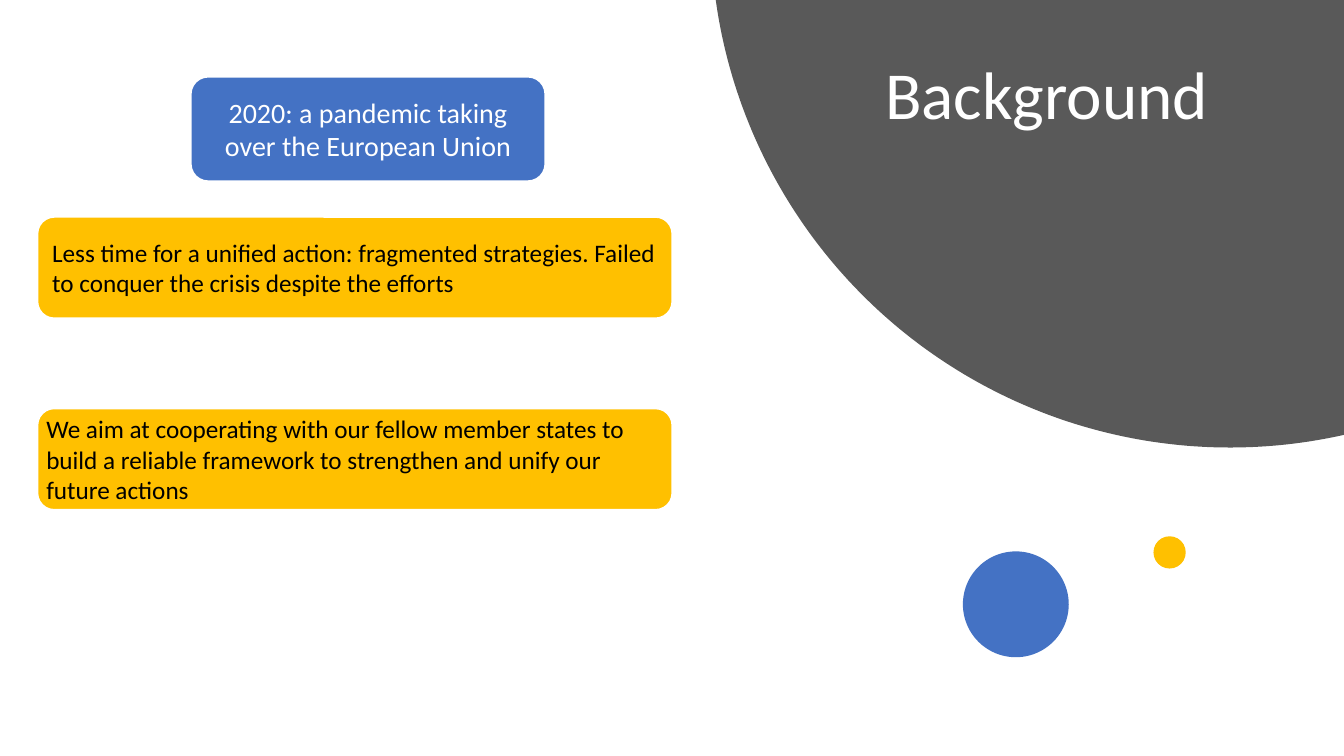
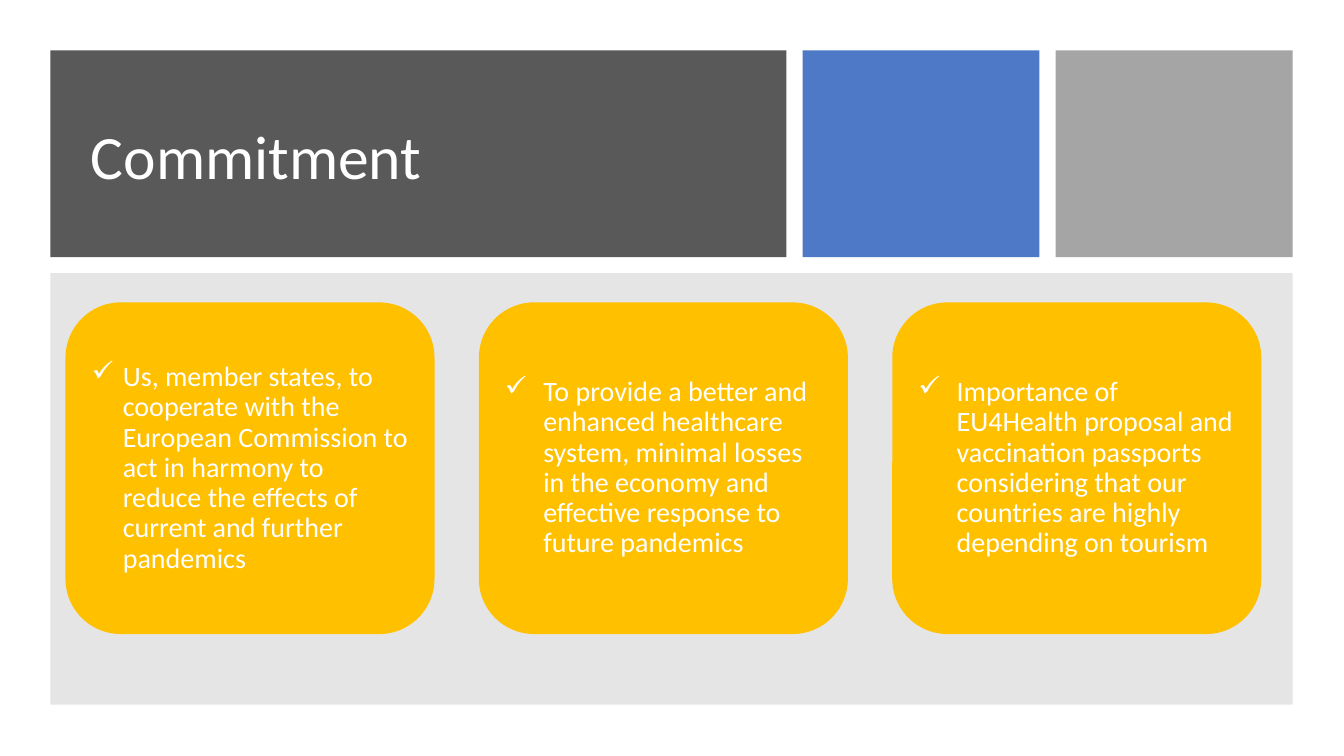
from math import atan2, cos, pi, sin, sqrt

from lxml.etree import SubElement
from pptx import Presentation
from pptx.dml.color import RGBColor
from pptx.enum.shapes import MSO_SHAPE
from pptx.enum.text import MSO_ANCHOR, PP_ALIGN
from pptx.oxml.ns import qn
from pptx.util import Inches, Pt

COLORS = {
    "dark": "595959",
    "blue": "4472C4",
    "gold": "FFC000",
    "gray": "A5A5A5",
    "mist": "808080",
    "white": "FFFFFF",
    "black": "000000",
}
FONT = "Calibri"
WIDTH, HEIGHT = 13.33, 7.5


def color(name):
    return RGBColor.from_string(COLORS[name])


def paint(shape, fill, line=None, alpha=None):
    shape.shadow.inherit = False
    shape.fill.solid()
    shape.fill.fore_color.rgb = color(fill)
    if alpha:
        tone = shape.element.spPr.find(qn("a:solidFill"))[0]
        SubElement(tone, qn("a:alpha"), val=str(alpha * 1000))
    if line:
        shape.line.color.rgb = color(line)
        shape.line.width = Pt(1.5)
    else:
        shape.line.fill.background()
    return shape


def add_block(slide, kind, box, fill, line=None, alpha=None):
    shape = slide.shapes.add_shape(kind, *map(Inches, box))
    return paint(shape, fill, line, alpha)


def write(shape, text, size, tint="white", align=PP_ALIGN.LEFT):
    frame = shape.text_frame
    frame.word_wrap = True
    frame.vertical_anchor = MSO_ANCHOR.MIDDLE
    frame.text = text
    para = frame.paragraphs[0]
    para.alignment = align
    for run in para.runs:
        run.font.name = FONT
        run.font.size = Pt(size)
        run.font.color.rgb = color(tint)
    return para


def add_title(slide, text, box, size):
    title = slide.shapes.title
    title.left, title.top, title.width, title.height = map(Inches, box)
    write(title, text, size).line_spacing = 0.9
    title.element.getparent().append(title.element)


def add_check(para, indent):
    props = para._p.get_or_add_pPr()
    props.set("marL", str(Inches(indent)))
    props.set("indent", str(-Inches(indent)))
    SubElement(props, qn("a:buChar"), char="✓")
    para.line_spacing = 0.9
    para.space_after = Pt(6)


def add_disc(slide, mid, low, radius, steps=120):
    rise = low - radius
    side = WIDTH - mid
    first = atan2(sqrt(radius**2 - side**2), side)
    last = pi - atan2(-rise, sqrt(radius**2 - rise**2))
    turns = [first + (last - first) * i / steps for i in range(steps + 1)]
    arc = [(mid + radius * cos(t), rise + radius * sin(t)) for t in turns]
    outline = slide.shapes.build_freeform(Inches(WIDTH), 0)
    outline.add_line_segments([(Inches(x), Inches(y)) for x, y in arc])
    paint(outline.convert_to_shape(), "dark")


def build_background(slide):
    add_disc(slide, 12.2, 4.44, 5.15)
    for left, top, size, fill in ((9.55, 5.47, 1.05, "blue"), (11.44, 5.32, 0.32, "gold")):
        add_block(slide, MSO_SHAPE.OVAL, (left, top, size, size), fill)
    add_title(slide, "Background", (8.68, 0.02, 4.5, 1.9), 48)

    lead = add_block(slide, MSO_SHAPE.ROUNDED_RECTANGLE, (1.89, 0.76, 3.52, 1.04), "blue", "white")
    write(lead, "2020: a pandemic taking over the European Union", 20, align=PP_ALIGN.CENTER)
    notes = (
        (2.15, 0.1, "Less time for a unified action: fragmented strategies. "
                    "Failed to conquer the crisis despite the efforts"),
        (4.05, 0.04, "We aim at cooperating with our fellow member states to build a "
                     "reliable framework to strengthen and unify our future actions"),
    )
    for top, inset, text in notes:
        note = add_block(slide, MSO_SHAPE.ROUNDED_RECTANGLE, (0.37, top, 6.3, 1.01), "gold", "white")
        note.text_frame.margin_left = Inches(inset)
        write(note, text, 18, "black")


def build_commitment(slide):
    bands = (
        ((0.5, 0.5, 7.3, 2.05), "dark", None),
        ((7.96, 0.5, 2.35, 2.05), "blue", 95),
        ((10.47, 0.5, 2.35, 2.05), "gray", None),
        ((0.5, 2.71, 12.32, 4.28), "mist", 20),
    )
    for box, fill, alpha in bands:
        add_block(slide, MSO_SHAPE.RECTANGLE, box, fill, alpha=alpha)
    add_title(slide, "Commitment", (0.8, 0.8, 6.66, 1.56), 44)

    cards = (
        (0.31, "Us, member states, to cooperate with the European Commission to act in "
               "harmony to reduce the effects of current and further pandemics"),
        (0.38, "To provide a better and enhanced healthcare system, minimal losses in "
               "the economy and effective response to future pandemics"),
        (0.38, "Importance of EU4Health proposal and vaccination passports considering "
               "that our countries are highly depending on tourism"),
    )
    for i, (indent, text) in enumerate(cards):
        box = (0.65 + 4.1 * i, 3, 3.66, 3.29)
        card = add_block(slide, MSO_SHAPE.ROUNDED_RECTANGLE, box, "gold")
        add_check(write(card, text, 20), indent)


def main():
    deck = Presentation()
    deck.slide_width = Inches(WIDTH)
    deck.slide_height = Inches(HEIGHT)
    for build in (build_background, build_commitment):
        build(deck.slides.add_slide(deck.slide_layouts[5]))
    deck.save("out.pptx")


if __name__ == "__main__":
    main()
